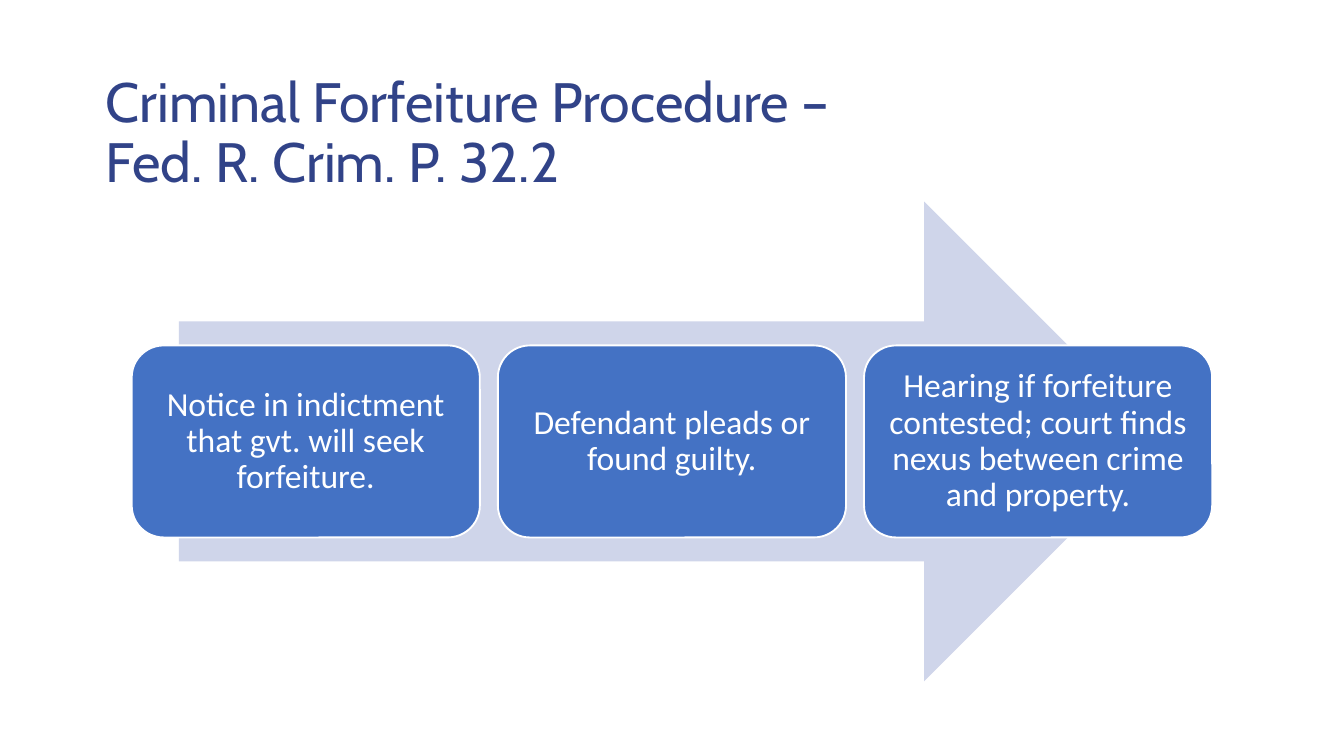
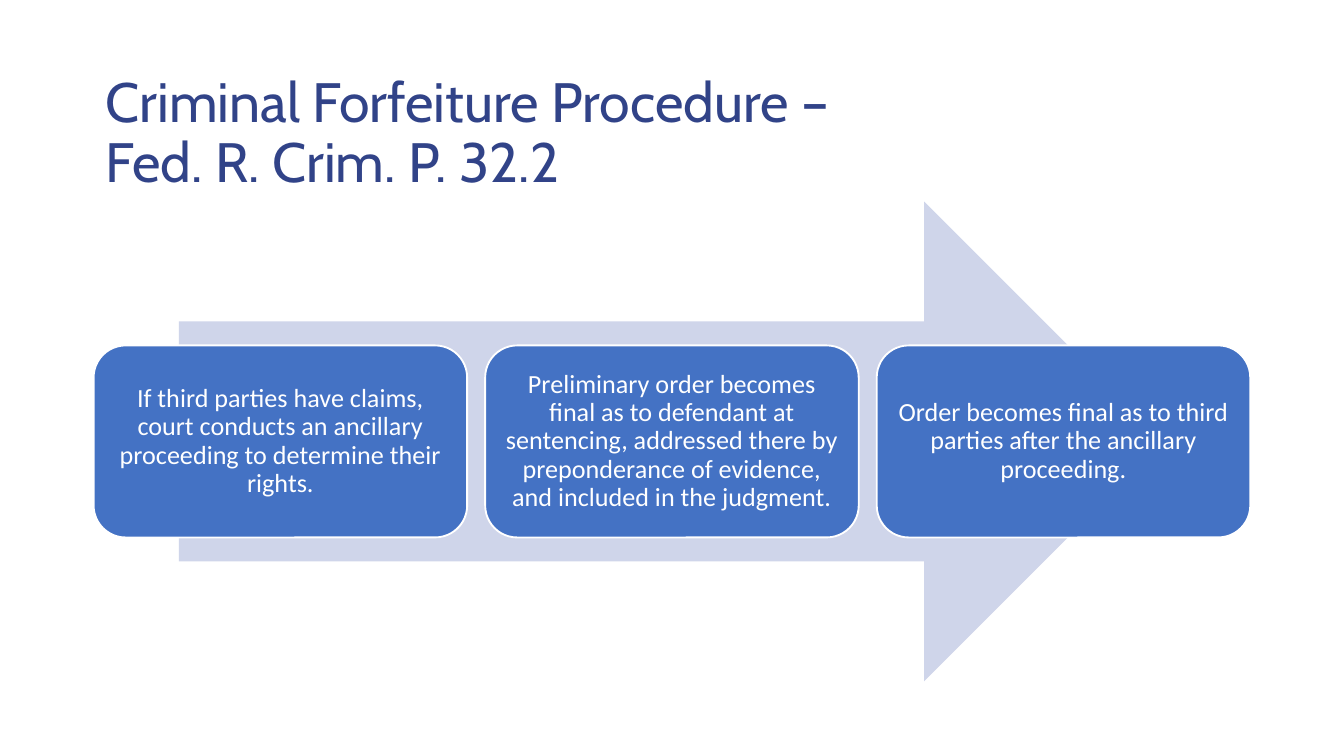
from pptx import Presentation
from pptx.dml.color import RGBColor
from pptx.enum.shapes import MSO_SHAPE
from pptx.enum.text import MSO_ANCHOR, PP_ALIGN
from pptx.util import Cm, Pt

ARROW = MSO_SHAPE.RIGHT_ARROW
ROUND = MSO_SHAPE.ROUNDED_RECTANGLE
MIDDLE = MSO_ANCHOR.MIDDLE
LEFT, CENTER = PP_ALIGN.LEFT, PP_ALIGN.CENTER

NAVY = RGBColor(0x31, 0x43, 0x88)
BLUE = RGBColor(0x44, 0x72, 0xC4)
PALE = RGBColor(0xCF, 0xD5, 0xEA)
WHITE = RGBColor(0xFF, 0xFF, 0xFF)

WIDE, HIGH = 25.4, 14.29
STEP_TOP, STEP_HIGH, GAP = 6.53, 3.63, 0.34

TITLE = ["Criminal Forfeiture Procedure – ", "Fed. R. Crim. P. 32.2"]
SLIDES = [
    (6.58, 18, 0.18, [
        "Notice in indictment that gvt. will seek forfeiture.",
        "Defendant pleads or found guilty.",
        "Hearing if forfeiture contested; court finds nexus between crime "
        "and property.",
    ]),
    (7.06, 14, 0.15, [
        "If third parties have claims, court conducts an ancillary "
        "proceeding to determine their rights.",
        "Preliminary order becomes final as to defendant at sentencing, "
        "addressed there by preponderance of evidence, and included in "
        "the judgment.",
        "Order becomes final as to third parties after the ancillary "
        "proceeding.",
    ]),
]


def put_text(frame, lines, font, size, color, align):
    frame.word_wrap = True
    frame.vertical_anchor = MIDDLE
    para = frame.paragraphs[0]
    para.alignment = align
    para.line_spacing = 0.9
    for i, line in enumerate(lines):
        if i:
            para.add_line_break()
        run = para.add_run()
        run.text = line
        run.font.name = font
        run.font.size = Pt(size)
        run.font.color.rgb = color


def add_title(slide):
    box = slide.shapes.add_textbox(Cm(1.75), Cm(1.55), Cm(21.9), Cm(1.98))
    put_text(box.text_frame, TITLE, "Cabin", 29.7, NAVY, LEFT)


def add_solid(slide, kind, left, top, width, height, fill):
    shape = slide.shapes.add_shape(
        kind, Cm(left), Cm(top), Cm(width), Cm(height))
    shape.shadow.inherit = False
    shape.fill.solid()
    shape.fill.fore_color.rgb = fill
    return shape


def add_arrow(slide):
    arrow = add_solid(slide, ARROW, 3.38, 3.81, 18.62, 9.07, PALE)
    arrow.line.fill.background()


def add_step(slide, left, width, text, size, inset):
    step = add_solid(slide, ROUND, left, STEP_TOP, width, STEP_HIGH, BLUE)
    step.line.color.rgb = WHITE
    step.line.width = Pt(1)
    frame = step.text_frame
    frame.margin_left = frame.margin_right = Cm(inset)
    frame.margin_top = frame.margin_bottom = Cm(inset)
    put_text(frame, [text], "Calibri", size, WHITE, CENTER)


def add_steps(slide, width, size, inset, texts):
    pitch = width + GAP
    start = (WIDE - len(texts) * pitch + GAP) / 2
    for i, text in enumerate(texts):
        add_step(slide, start + i * pitch, width, text, size, inset)


def main():
    deck = Presentation()
    deck.slide_width = Cm(WIDE)
    deck.slide_height = Cm(HIGH)
    for width, size, inset, texts in SLIDES:
        slide = deck.slides.add_slide(deck.slide_layouts[6])
        add_title(slide)
        add_arrow(slide)
        add_steps(slide, width, size, inset, texts)
    deck.save("out.pptx")


if __name__ == "__main__":
    main()
